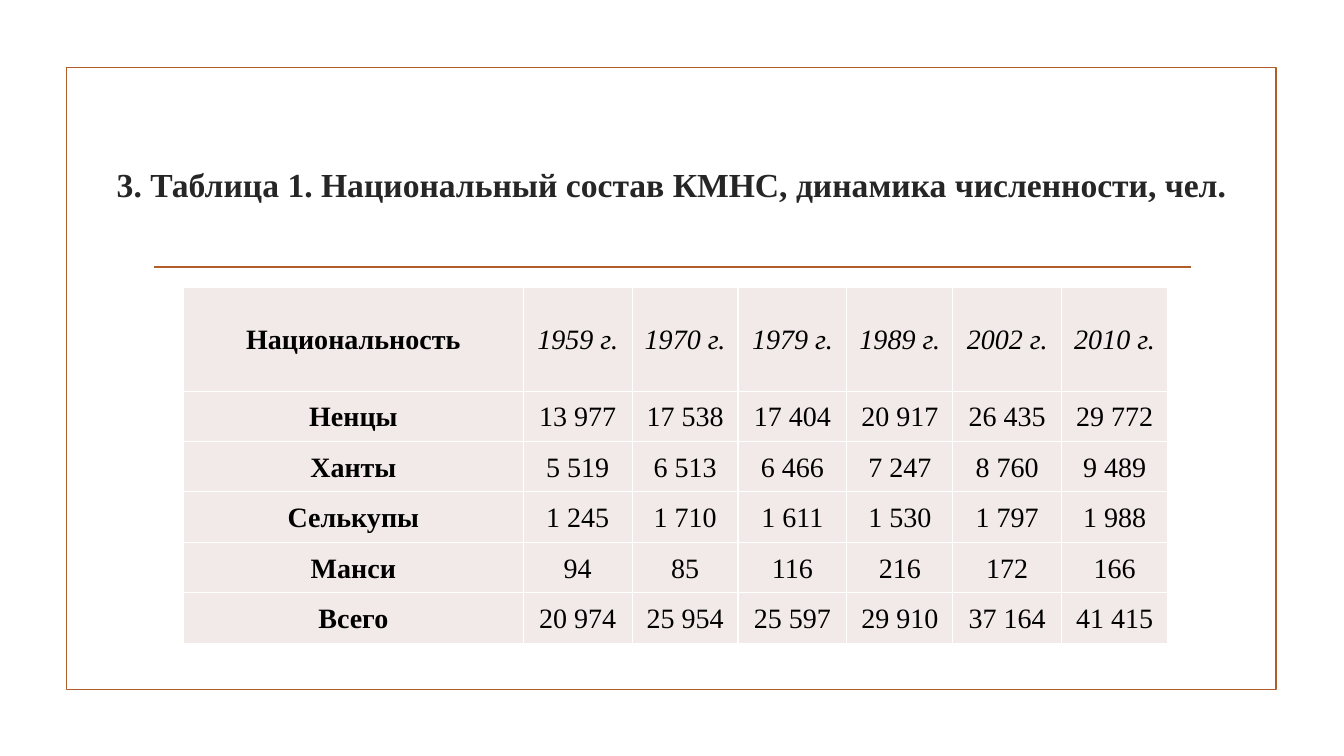
from lxml.etree import SubElement
from pptx import Presentation
from pptx.dml.color import RGBColor
from pptx.enum.shapes import MSO_CONNECTOR, MSO_SHAPE
from pptx.enum.text import MSO_ANCHOR, PP_ALIGN
from pptx.oxml.ns import qn
from pptx.util import Inches, Pt

TITLE = "3. Таблица 1. Национальный состав КМНС, динамика численности, чел."
ROWS = [
    ("Национальность", "1959 г.", "1970 г.", "1979 г.", "1989 г.", "2002 г.", "2010 г."),
    ("Ненцы", "13 977", "17 538", "17 404", "20 917", "26 435", "29 772"),
    ("Ханты", "5 519", "6 513", "6 466", "7 247", "8 760", "9 489"),
    ("Селькупы", "1 245", "1 710", "1 611", "1 530", "1 797", "1 988"),
    ("Манси", "94", "85", "116", "216", "172", "166"),
    ("Всего", "20 974", "25 954", "25 597", "29 910", "37 164", "41 415"),
]
WIDTHS = [3.37] + [1.08, 1.05] * 3
HEIGHTS = [1.03] + [0.5] * 5

RUST = RGBColor(0xB1, 0x5E, 0x28)
DARK = RGBColor(0x26, 0x26, 0x26)
BLACK = RGBColor(0, 0, 0)
WHITE = RGBColor(255, 255, 255)
BLUSH = RGBColor(0xF2, 0xEA, 0xE8)


def assign(item, **values):
    for name, value in values.items():
        setattr(item, name, value)


def write(frame, text, size, color, **style):
    frame.text = text
    para = frame.paragraphs[0]
    para.alignment = PP_ALIGN.CENTER
    font = para.runs[0].font
    assign(font, name="Times New Roman", size=Pt(size), **style)
    font.color.rgb = color
    return para


def add_borders(cell):
    props = cell._tc.get_or_add_tcPr()
    for side in ("lnL", "lnR", "lnT", "lnB"):
        line = SubElement(props, qn(f"a:{side}"), w=str(Pt(1)))
        fill = SubElement(line, qn("a:solidFill"))
        SubElement(fill, qn("a:srgbClr"), val=str(WHITE))


def add_frame(slide):
    box = slide.shapes.add_shape(
        MSO_SHAPE.RECTANGLE, Inches(0.66), Inches(0.67), Inches(12), Inches(6.17))
    box.fill.background()
    box.shadow.inherit = False
    rule = slide.shapes.add_connector(
        MSO_CONNECTOR.STRAIGHT, Inches(1.53), Inches(2.65), Inches(11.81), Inches(2.65))
    SubElement(rule._element.spPr, qn("a:effectLst"))
    for item in (box, rule):
        item.line.color.rgb = RUST
        item.line.width = Pt(1.25)


def add_title(slide):
    title = slide.shapes.title
    assign(title, left=Inches(1.04), top=Inches(1.11),
           width=Inches(11.24), height=Inches(1.43))
    title.text_frame.vertical_anchor = MSO_ANCHOR.MIDDLE
    write(title.text_frame, TITLE, 24, DARK, bold=True)


def add_grid(slide):
    table = slide.shapes.add_table(
        len(ROWS), len(WIDTHS), Inches(1.82), Inches(2.85),
        Inches(sum(WIDTHS)), Inches(sum(HEIGHTS))).table
    for col, width in zip(table.columns, WIDTHS):
        col.width = Inches(width)
    for row, height in zip(table.rows, HEIGHTS):
        row.height = Inches(height)
    for r, texts in enumerate(ROWS):
        for c, text in enumerate(texts):
            cell = table.cell(r, c)
            assign(cell, vertical_anchor=MSO_ANCHOR.MIDDLE, margin_left=0,
                   margin_right=0, margin_top=0, margin_bottom=0)
            add_borders(cell)
            cell.fill.solid()
            cell.fill.fore_color.rgb = BLUSH
            para = write(cell.text_frame, text, 20, BLACK,
                         bold=c == 0, italic=r == 0 and c > 0)
            assign(para, line_spacing=1.07, space_after=Pt(8))


def main():
    deck = Presentation()
    assign(deck, slide_width=Inches(13.33), slide_height=Inches(7.5))
    slide = deck.slides.add_slide(deck.slide_layouts[5])
    add_frame(slide)
    add_title(slide)
    add_grid(slide)
    deck.save("out.pptx")


if __name__ == "__main__":
    main()
